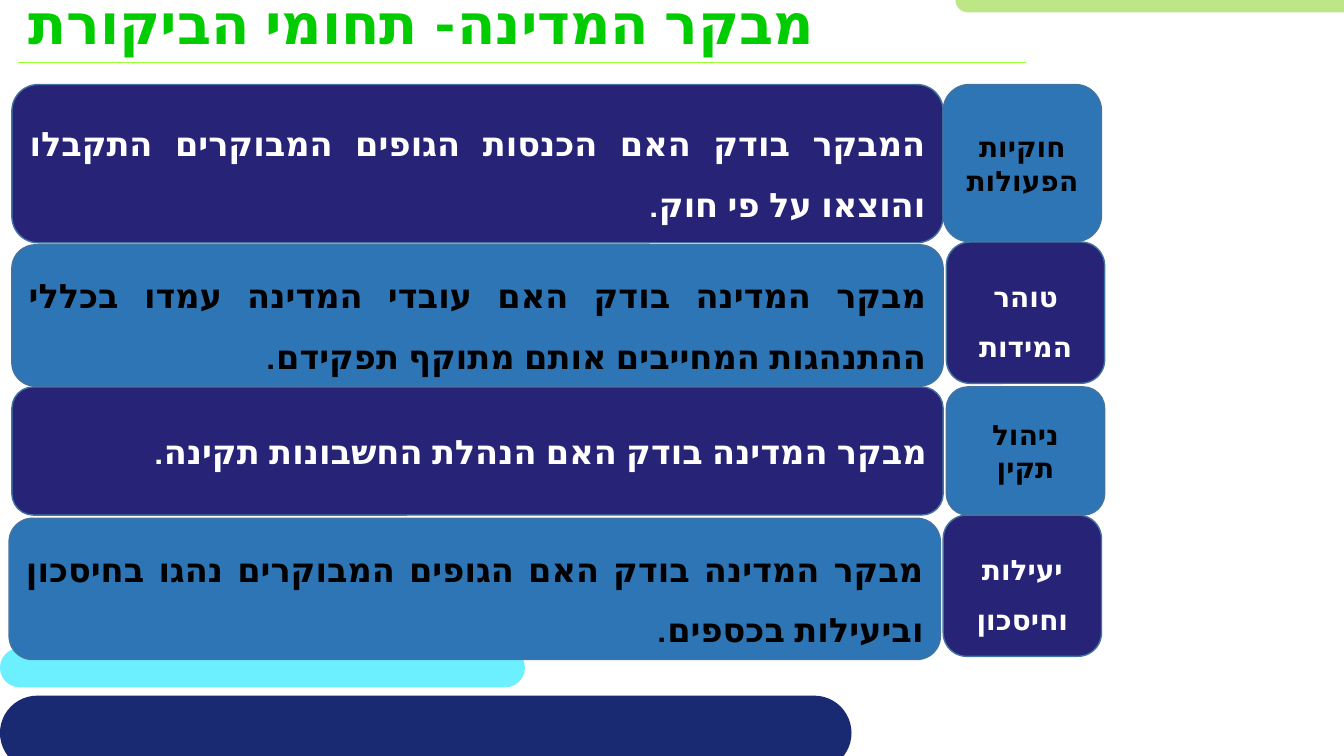
from pptx import Presentation
from pptx.dml.color import RGBColor
from pptx.enum.lang import MSO_LANGUAGE_ID as LANG
from pptx.enum.shapes import MSO_CONNECTOR as CONN, MSO_SHAPE as SHAPE
from pptx.enum.text import MSO_ANCHOR as ANCHOR, MSO_AUTO_SIZE as AUTO, PP_ALIGN as ALIGN
from pptx.oxml.ns import qn
from pptx.util import Cm, Pt
from lxml import etree

FONT = "TeX Gyre Adventor"
COLORS = {
    "navy": "272377", "blue": "2E75B6", "outline": "43739E",
    "white": "FFFFFF", "black": "000000", "title": "00CC00", "rule": "99FF33",
    "cyan": "6CF0FF", "lime": "BDE686", "footer": "192A72",
}
TEXT_ON = {"navy": "white", "blue": "black"}
BODY_W, LABEL_W = 23.47, 3.99
BANDS = [
    ("cyan", (0, 16.33, 13.23, 0.99)),
    ("lime", (24.08, -0.3, 14.73, 0.61)),
    ("footer", (0, 17.53, 21.46, 1.88)),
]
ROWS = [
    {"body": "המבקר בודק האם הכנסות הגופים המבוקרים התקבלו והוצאו על פי חוק.",
     "label": "חוקיות הפעולות", "body_at": (0.3, 2.13, 3.99),
     "label_at": (23.77, 2.13, 3.96), "spacing": (1.5, None)},
    {"body": "מבקר המדינה בודק האם עובדי המדינה עמדו בכללי ההתנהגות המחייבים אותם מתוקף תפקידם.",
     "label": "טוהר המידות", "body_at": (0.3, 6.17, 3.56),
     "label_at": (23.85, 6.1, 3.56), "spacing": (1.5, 1.5)},
    {"body": "מבקר המדינה בודק האם הנהלת החשבונות תקינה.",
     "label": "ניהול תקין", "body_at": (0.3, 9.75, 3.23),
     "label_at": (23.85, 9.75, 3.23), "spacing": (None, None)},
    {"body": "מבקר המדינה בודק האם הגופים המבוקרים נהגו בחיסכון וביעילות בכספים.",
     "label": "יעילות וחיסכון", "body_at": (0.23, 13.06, 3.56),
     "label_at": (23.77, 12.98, 3.56), "spacing": (1.5, 1.5)},
]


def rgb(name):
    """Return the named colour."""
    return RGBColor.from_string(COLORS[name])


def write_text(tf, text, size=20, color="black", align=None, spacing=None):
    """Write one bold right-to-left paragraph into a text frame."""
    tf.word_wrap = True
    p = tf.paragraphs[0]
    p.alignment = align
    p.line_spacing = spacing
    p._p.get_or_add_pPr().set("rtl", "1")
    r = p.add_run()
    r.text = text
    r.font.name = FONT
    r.font.size = Pt(size)
    r.font.bold = True
    r.font.color.rgb = rgb(color)
    r.font.language_id = LANG.HEBREW
    cs = etree.SubElement(r._r.get_or_add_rPr(), qn("a:cs"))
    cs.set("typeface", FONT)


def add_rounded(s, box, fill, outline=None):
    """Add a rounded rectangle, outlined only when a colour is named."""
    sp = s.shapes.add_shape(SHAPE.ROUNDED_RECTANGLE, *map(Cm, box))
    sp.shadow.inherit = False
    sp.fill.solid()
    sp.fill.fore_color.rgb = rgb(fill)
    if outline:
        sp.line.color.rgb = rgb(outline)
        sp.line.width = Pt(1)
    else:
        sp.line.fill.background()
    return sp


def add_band(s, fill, box):
    """Add a decorative band with fully rounded ends."""
    add_rounded(s, box, fill).adjustments[0] = 0.5


def add_card(s, text, at, width, fill, **fmt):
    """Add an outlined card with vertically centred text."""
    left, top, height = at
    sp = add_rounded(s, (left, top, width, height), fill, "outline")
    sp.text_frame.vertical_anchor = ANCHOR.MIDDLE
    write_text(sp.text_frame, text, color=TEXT_ON[fill], **fmt)


def add_row(s, row, body_fill, label_fill):
    """Add an audit area: its explanation and its label."""
    body_spacing, label_spacing = row["spacing"]
    add_card(s, row["body"], row["body_at"], BODY_W, body_fill,
             size=24, align=ALIGN.JUSTIFY, spacing=body_spacing)
    add_card(s, row["label"], row["label_at"], LABEL_W, label_fill,
             size=20, align=ALIGN.CENTER, spacing=label_spacing)


def add_rule(s, left, right, y):
    """Add the thin line under the title."""
    line = s.shapes.add_connector(CONN.STRAIGHT, Cm(left), Cm(y), Cm(right), Cm(y))
    line.line.color.rgb = rgb("rule")
    line.line.width = Pt(0.5)
    etree.SubElement(line._element.spPr, qn("a:effectLst"))


def add_title(s, text, box):
    """Add the slide title."""
    tf = s.shapes.add_textbox(*map(Cm, box)).text_frame
    tf.auto_size = AUTO.SHAPE_TO_FIT_TEXT
    write_text(tf, text, size=40, color="title")


def main():
    """Build the slide and save it."""
    prs = Presentation()
    prs.slide_width, prs.slide_height = Cm(33.87), Cm(19.05)
    s = prs.slides.add_slide(prs.slide_layouts[6])
    for fill, box in BANDS:
        add_band(s, fill, box)
    add_rule(s, 0.46, 25.86, 1.57)
    add_title(s, "מבקר המדינה- תחומי הביקורת", (0.48, -0.41, 23.88, 2.74))
    fills = ("navy", "blue")
    for i, row in enumerate(ROWS):
        add_row(s, row, fills[i % 2], fills[(i + 1) % 2])
    prs.save("out.pptx")


if __name__ == "__main__":
    main()
